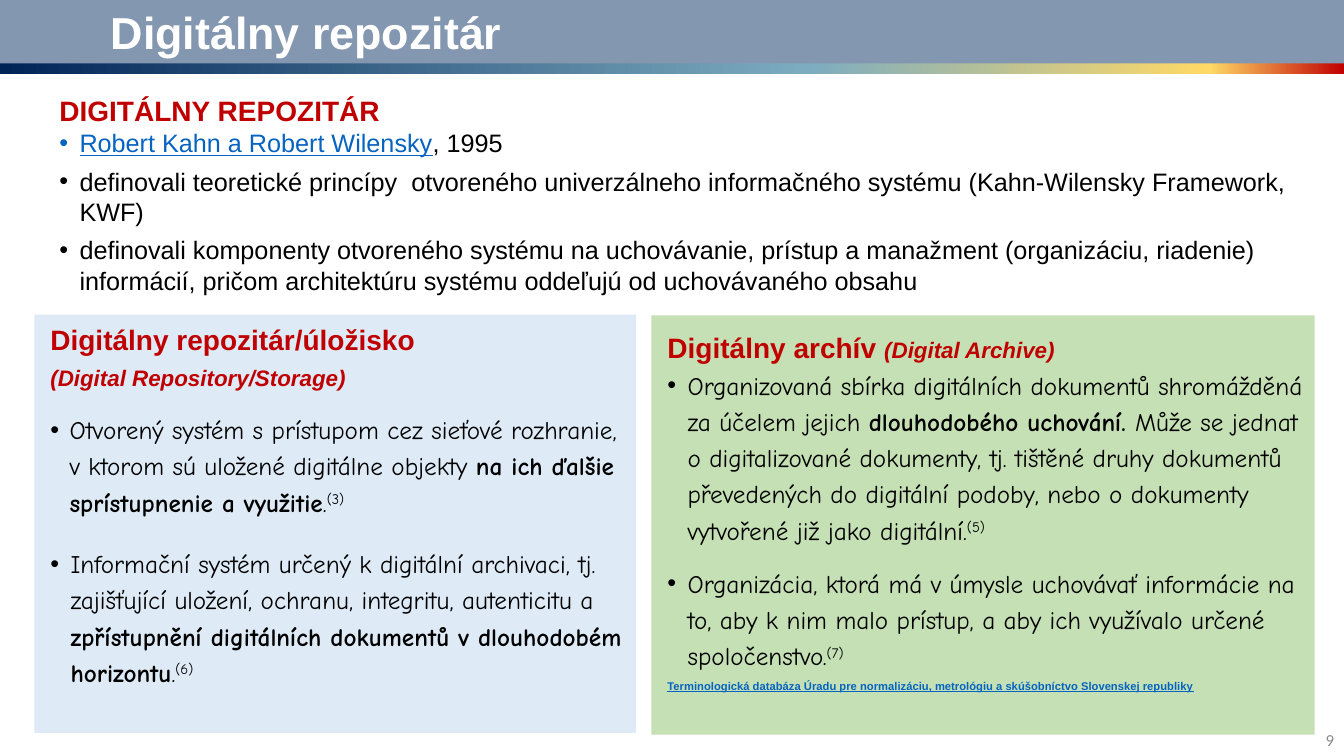
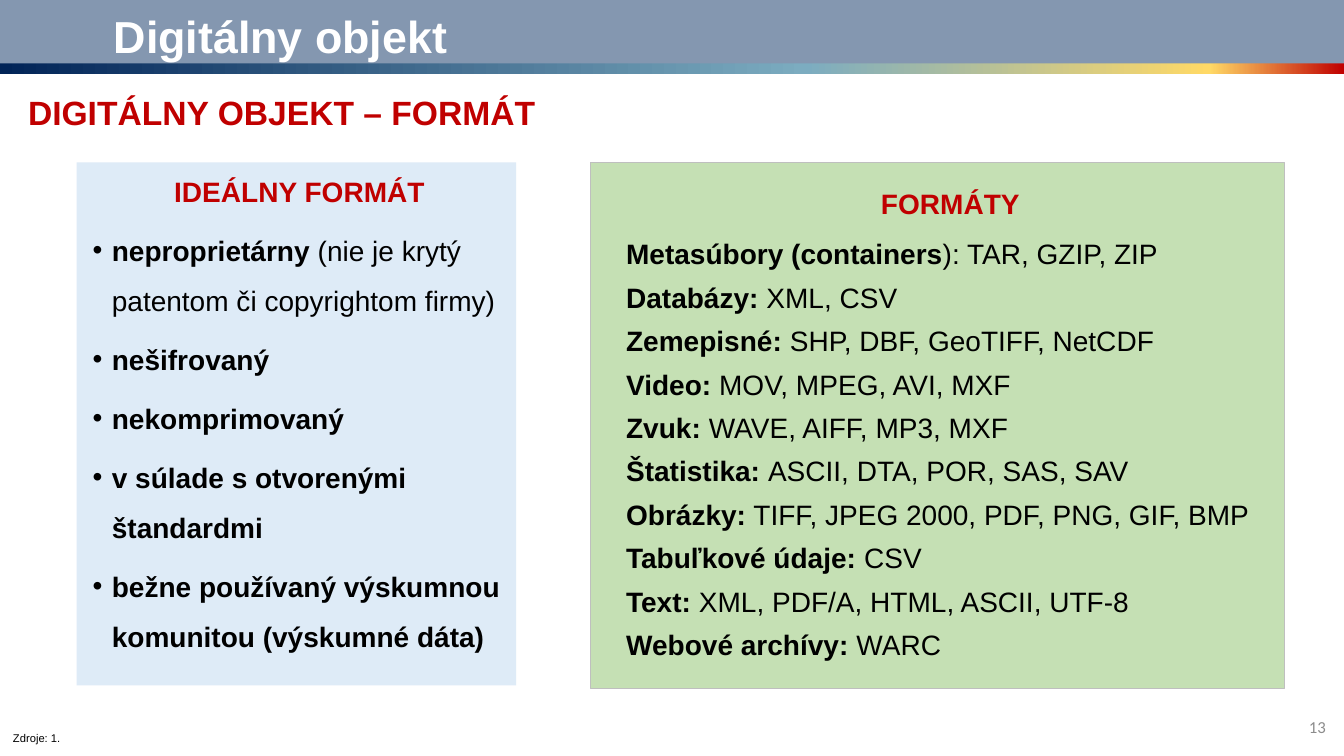
from dataclasses import dataclass, field

from lxml import etree
from pptx import Presentation
from pptx import util as u
from pptx.dml.color import RGBColor
from pptx.enum import shapes, text
from pptx.oxml import ns

EMU_PER_PX = 9144
WIDTH, HEIGHT = 1333, 750


def px(length):
    return u.Emu(length * EMU_PER_PX)


def style(name, size, color, **extra):
    return {"font": {"name": name, "size": u.Pt(size), **extra}, "color": color}


@dataclass(frozen=True)
class Theme:
    band: str = "8497B0"
    blue: str = "DEEBF7"
    green: str = "C5E0B4"
    outline: str = "BFBFBF"
    stripe: tuple = ((0, "012457"), (60, "7CACC0"), (90, "FFD966"), (100, "C00000"))
    styles: dict = field(default_factory=lambda: {
        "title": style("Arial", 32, "FFFFFF", bold=True),
        "section": style("Arial", 24, "C00000", bold=True),
        "heading": style("Arial", 20, "C00000", bold=True),
        "english": style("Arial", 16, "C00000", bold=True, italic=True),
        "body": style("Arial", 18, "000000"),
        "link": style("Arial", 18, "0563C1", underline=True),
        "note": style("Comic Neue", 18, "000000"),
        "note bold": style("Comic Neue", 18, "000000", bold=True),
        "citation": {**style("Comic Neue", 18, "000000"), "baseline": "30000"},
        "item": style("Arial", 20, "000000"),
        "item bold": style("Arial", 20, "000000", bold=True),
        "source link": style("Arial", 8, "0563C1", bold=True, underline=True),
        "source": style("Arial", 8, "000000"),
        "number": style("Calibri", 12, "8C8C8C"),
    })


def para(*runs, bullet=0, **layout):
    return {"runs": runs, "bullet": bullet, "layout": layout}


class Deck:
    def __init__(self, theme):
        self.theme = theme
        self.file = Presentation()
        self.file.slide_width, self.file.slide_height = px(WIDTH), px(HEIGHT)
        self.slide = None

    def page(self, title, number, title_at, number_at):
        self.slide = self.file.slides.add_slide(self.file.slide_layouts[6])
        self.stripe((0, 51, WIDTH, 23))
        self.panel((0, 0, WIDTH, 63), self.theme.band)
        middle = text.MSO_ANCHOR.MIDDLE
        self.label(title_at, [para(("title", title))], middle)
        folio = para(("number", number), alignment=text.PP_ALIGN.RIGHT)
        self.label(number_at, [folio], middle)

    def rectangle(self, box):
        rectangle = self.slide.shapes.add_shape(
            shapes.MSO_SHAPE.RECTANGLE, *map(px, box))
        rectangle.shadow.inherit = False
        rectangle.line.fill.background()
        return rectangle

    def stripe(self, box):
        stripe = self.rectangle(box)
        stripe.fill.gradient()
        stripe.fill.gradient_angle = 0
        stops = stripe._element.spPr.find(".//" + ns.qn("a:gsLst"))
        for old in list(stops):
            stops.remove(old)
        for position, color in self.theme.stripe:
            stop = etree.SubElement(stops, ns.qn("a:gs"), pos=str(position * 1000))
            etree.SubElement(stop, ns.qn("a:srgbClr"), val=color)

    def panel(self, box, color, paragraphs=(), insets=(10, 5, 10, 5), outline=None):
        panel = self.rectangle(box)
        panel.fill.solid()
        panel.fill.fore_color.rgb = RGBColor.from_string(color)
        if outline:
            panel.line.color.rgb = RGBColor.from_string(outline)
            panel.line.width = u.Pt(0.75)
        if paragraphs:
            self.typeset(panel.text_frame, paragraphs, insets)

    def label(self, box, paragraphs, anchor=text.MSO_ANCHOR.TOP):
        label = self.slide.shapes.add_textbox(*map(px, box))
        self.typeset(label.text_frame, paragraphs, anchor=anchor)

    def typeset(self, frame, paragraphs, insets=(10, 5, 10, 5),
                anchor=text.MSO_ANCHOR.TOP):
        frame.word_wrap = True
        frame.vertical_anchor = anchor
        for side, inset in zip(("left", "top", "right", "bottom"), insets):
            setattr(frame, f"margin_{side}", px(inset))
        for index, content in enumerate(paragraphs):
            line = frame.add_paragraph() if index else frame.paragraphs[0]
            layout = {"alignment": text.PP_ALIGN.LEFT, **content["layout"]}
            for name, value in layout.items():
                setattr(line, name, value)
            if content["bullet"]:
                self.bullet(line, px(content["bullet"]))
            for kind, words in content["runs"]:
                self.phrase(line, self.theme.styles[kind], words)

    def bullet(self, line, indent):
        properties = line._p.get_or_add_pPr()
        properties.set("marL", str(indent))
        properties.set("indent", str(-indent))
        etree.SubElement(properties, ns.qn("a:buFont"), typeface="Arial")
        etree.SubElement(properties, ns.qn("a:buChar"), char="•")

    def phrase(self, line, look, words):
        phrase = line.add_run()
        phrase.text = words
        for name, value in look["font"].items():
            setattr(phrase.font, name, value)
        phrase.font.color.rgb = RGBColor.from_string(look["color"])
        if "baseline" in look:
            phrase._r.get_or_add_rPr().set("baseline", look["baseline"])


def repository(deck):
    deck.page("Digitálny repozitár", "9", (100, 0, 800, 63), (1295, 724, 38, 20))
    deck.label((49, 88, 1255, 207), [
        para(("heading", "DIGITÁLNY REPOZITÁR")),
        para(("link", "Robert Kahn a Robert Wilensky"), ("body", ", 1995"), bullet=20),
        *(para(("body", words), bullet=20, space_before=u.Pt(6)) for words in (
            "definovali teoretické princípy  otvoreného univerzálneho informačného "
            "systému (Kahn-Wilensky Framework, KWF)",
            "definovali komponenty otvoreného systému na uchovávanie, prístup a "
            "manažment (organizáciu, riadenie) informácií, pričom architektúru "
            "systému oddeľujú od uchovávaného obsahu")),
    ])
    deck.panel((34, 312, 597, 415), deck.theme.blue, [
        para(("heading", "Digitálny repozitár/úložisko")),
        para(("english", "(Digital Repository/Storage)"), space_before=u.Pt(6)),
        para(("note", "Otvorený systém s prístupom cez sieťové rozhranie, v ktorom "
                      "sú uložené digitálne objekty "),
             ("note bold", "na ich ďalšie sprístupnenie a využitie"),
             ("note", "."), ("citation", "(3)"),
             bullet=19, line_spacing=1.2, space_before=u.Pt(12)),
        para(("note", "Informační systém určený k digitální archivaci, tj. "
                      "zajišťující uložení, ochranu, integritu, autenticitu a "),
             ("note bold", "zpřístupnění digitálních dokumentů v dlouhodobém horizontu"),
             ("note", "."), ("citation", "(6)"),
             bullet=20, line_spacing=1.2, space_before=u.Pt(18)),
    ], (16, 8, 10, 20))
    deck.panel((646, 313, 658, 416), deck.theme.green, [
        para(("heading", "Digitálny archív "), ("english", "(Digital Archive)"),
             line_spacing=1.2),
        para(("note", "Organizovaná sbírka digitálních dokumentů shromážděná za "
                      "účelem jejich "),
             ("note bold", "dlouhodobého uchování. "),
             ("note", "Může se jednat o digitalizované dokumenty, tj. tištěné druhy "
                      "dokumentů převedených do digitální podoby, nebo o dokumenty "
                      "vytvořené již jako digitální."),
             ("citation", "(5)"), bullet=20, line_spacing=1.2),
        para(("note", "Organizácia, ktorá má v úmysle uchovávať informácie na to, aby "
                      "k nim malo prístup, a aby ich využívalo určené spoločenstvo."),
             ("citation", "(7)"),
             bullet=20, line_spacing=1.2, space_before=u.Pt(12)),
        para(("source link", "Terminologická databáza Úradu pre normalizáciu, "
                             "metrológiu a skúšobníctvo Slovenskej republiky"),
             space_before=u.Pt(6)),
    ], (16, 8, 10, 8))


def formats(deck):
    center = text.PP_ALIGN.CENTER
    ideal = (
        [("item bold", "neproprietárny "),
         ("item", "(nie je krytý patentom či copyrightom firmy)")],
        [("item bold", "nešifrovaný")],
        [("item bold", "nekomprimovaný")],
        [("item bold", "v súlade s otvorenými štandardmi")],
        [("item bold", "bežne používaný výskumnou komunitou (výskumné dáta)")],
    )
    families = (
        ("Metasúbory (containers", "): TAR, GZIP, ZIP"),
        ("Databázy:", " XML, CSV"),
        ("Zemepisné:", " SHP, DBF, GeoTIFF, NetCDF"),
        ("Video:", " MOV, MPEG, AVI, MXF"),
        ("Zvuk: ", "WAVE, AIFF, MP3, MXF"),
        ("Štatistika: ", "ASCII, DTA, POR, SAS, SAV"),
        ("Obrázky:", " TIFF, JPEG 2000, PDF, PNG, GIF, BMP"),
        ("Tabuľkové údaje: ", "CSV"),
        ("Text:", " XML, PDF/A, HTML, ASCII, UTF-8"),
        ("Webové archívy: ", "WARC"),
    )
    deck.page("Digitálny objekt", "13", (103, 3, 621, 64), (1288, 701, 37, 40))
    deck.label((3, 721, 72, 24), [para(("source", "Zdroje: 1."))])
    deck.panel((76, 161, 436, 519), deck.theme.blue, [
        para(("heading", "IDEÁLNY FORMÁT"), alignment=center, space_before=u.Pt(6)),
        *(para(*runs, bullet=19, line_spacing=1.5, space_before=u.Pt(6))
          for runs in ideal),
    ], (16, 12, 10, 8))
    deck.panel((586, 161, 688, 522), deck.theme.green, [
        para(("heading", "FORMÁTY"), alignment=center),
        *(para(("item bold", family), ("item", names),
               space_before=u.Pt(7 if index else 12))
          for index, (family, names) in enumerate(families)),
    ], (35, 24, 10, 5), deck.theme.outline)
    deck.label((18, 86, 540, 50), [para(("section", "DIGITÁLNY OBJEKT – FORMÁT"))])


def main():
    deck = Deck(Theme())
    repository(deck)
    formats(deck)
    deck.file.save("out.pptx")


if __name__ == "__main__":
    main()
